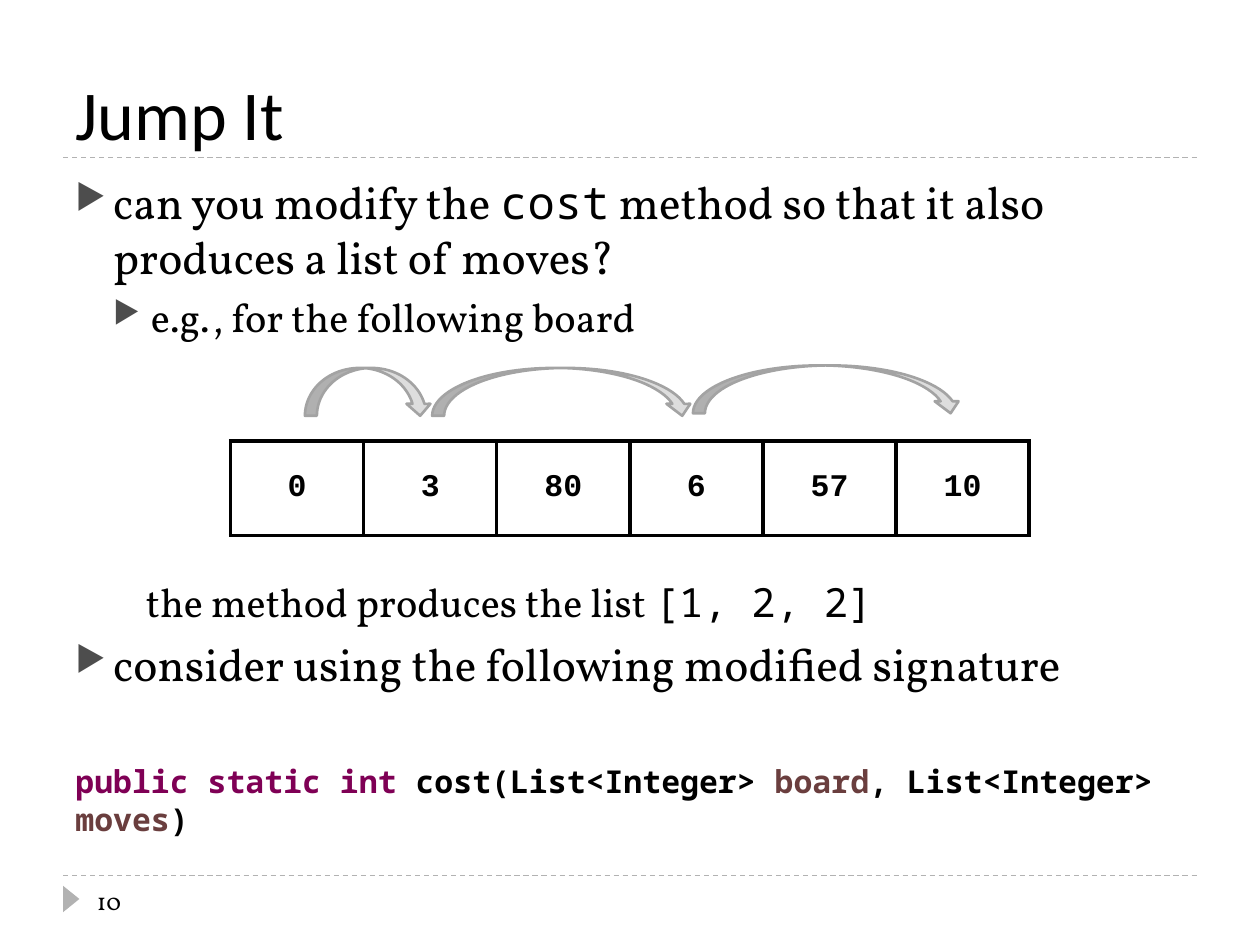
from lxml.etree import SubElement
from pptx import Presentation
from pptx.dml.color import RGBColor
from pptx.enum.dml import MSO_LINE
from pptx.enum.shapes import MSO_CONNECTOR, MSO_SHAPE
from pptx.enum.text import MSO_ANCHOR as Anchor, MSO_AUTO_SIZE, PP_ALIGN as Align
from pptx.oxml.ns import qn
from pptx.util import Inches, Pt

COLORS = {
    "text": "000000", "rule": "B2B2B2", "bullet": "4D4D4D",
    "keyword": "7F0055", "variable": "6A3E3E",
    "arrow": "DDDDDD", "arrow_edge": "A3A3A3",
}
HEADING, SERIF, MONO, CELL = "Calibri", "Vollkorn", "Noto Sans Mono", "Courier New"


def rgb(name):
    return RGBColor.from_string(COLORS[name])


class SlideBuilder:
    def __init__(self, deck):
        self.page = deck.slides.add_slide(deck.slide_layouts[5])
        self.shapes = self.page.shapes

    def frame(self, box, **formats):
        frame = box.text_frame
        defaults = {"word_wrap": True, "auto_size": MSO_AUTO_SIZE.NONE}
        for key, value in {**defaults, **formats}.items():
            setattr(frame, key, value)
        return frame

    def span(self, para, text, font, size, color="text", bold=False):
        span = para.add_run()
        span.text = text
        for key, value in {"name": font, "size": Pt(size), "bold": bold}.items():
            setattr(span.font, key, value)
        span.font.color.rgb = rgb(color)

    def title(self, text, place):
        box = self.shapes.title
        box.left, box.top, box.width, box.height = map(Inches, place)
        frame = self.frame(box, vertical_anchor=Anchor.BOTTOM, margin_bottom=Inches(0.02))
        frame.paragraphs[0].alignment = Align.LEFT
        self.span(frame.paragraphs[0], text, HEADING, 40)

    def text(self, place, paragraphs, **formats):
        frame = self.frame(self.shapes.add_textbox(*map(Inches, place)), **formats)
        for index, item in enumerate(paragraphs):
            para = frame.add_paragraph() if index else frame.paragraphs[0]
            for key, value in item.get("format", {}).items():
                setattr(para, key, Pt(value))
            self.indent(para, item.get("left", 0), item.get("bullet", False))
            for span in item["spans"]:
                self.span(para, *span)

    def indent(self, para, left, bullet):
        props = para._p.get_or_add_pPr()
        props.set("marL", str(Inches(left)))
        props.set("indent", str(Inches(-0.3 if bullet else 0)))
        if not bullet:
            SubElement(props, qn("a:buNone"))
            return
        color = SubElement(props, qn("a:buClr"))
        SubElement(color, qn("a:srgbClr"), val=COLORS["bullet"])
        SubElement(props, qn("a:buSzPct"), val="76000")
        SubElement(props, qn("a:buChar"), char="▶")

    def rule(self, y):
        line = self.shapes.add_connector(
            MSO_CONNECTOR.STRAIGHT, Inches(0.5), Inches(y), Inches(9.5), Inches(y))
        line.line.color.rgb = rgb("rule")
        line.line.width = Pt(0.75)
        line.line.dash_style = MSO_LINE.DASH
        SubElement(line._element.spPr, qn("a:effectLst"))

    def shape(self, kind, place, fill, edge=None, rotation=0):
        shape = self.shapes.add_shape(kind, *map(Inches, place))
        shape.shadow.inherit = False
        shape.rotation = rotation
        shape.fill.solid()
        shape.fill.fore_color.rgb = rgb(fill)
        if edge:
            shape.line.color.rgb = rgb(edge)
            shape.line.width = Pt(1.5)
        else:
            shape.line.fill.background()

    def board(self, place, values):
        table = self.shapes.add_table(1, len(values), *map(Inches, place)).table
        table.first_row = table.horz_banding = False
        for cell, value in zip(table.iter_cells(), values):
            cell.vertical_anchor = Anchor.MIDDLE
            para = cell.text_frame.paragraphs[0]
            para.alignment = Align.CENTER
            self.span(para, str(value), CELL, 18, bold=True)
            props = cell._tc.get_or_add_tcPr()
            for side in ("lnL", "lnR", "lnT", "lnB"):
                border = SubElement(props, qn(f"a:{side}"), w=str(Pt(2.25)))
                fill = SubElement(border, qn("a:solidFill"))
                SubElement(fill, qn("a:srgbClr"), val=COLORS["text"])
            cell.fill.background()


def main():
    deck = Presentation()
    deck.slide_width, deck.slide_height = Inches(10), Inches(7.5)
    page = SlideBuilder(deck)

    # Rules and page marker
    for y in (6.95, 1.25):
        page.rule(y)
    page.shape(MSO_SHAPE.ISOSCELES_TRIANGLE, (0.46, 7.07, 0.21, 0.13), "rule", rotation=90)

    # Title and body; wide spacing leaves room for the board
    page.title("Jump It", (0.5, 0.17, 9, 1.08))
    main_point = {"space_before": 6, "line_spacing": 31.4}
    sub_point = {"space_before": 5, "line_spacing": 27.3}
    page.text((0.5, 1.33, 9, 5.4), [
        {"left": 0.3, "bullet": True, "format": main_point, "spans": [
            ("can you modify the ", SERIF, 26),
            ("cost", MONO, 26),
            (" method so that it also produces a list of moves?", SERIF, 26)]},
        {"left": 0.6, "bullet": True, "format": sub_point, "spans": [
            ("e.g., for the following board", SERIF, 23)]},
        {"left": 0.56, "format": {**sub_point, "space_before": 135.6}, "spans": [
            ("the method produces the list ", SERIF, 23),
            ("[1, 2, 2]", MONO, 23)]},
        {"left": 0.3, "bullet": True, "format": main_point, "spans": [
            ("consider using the following modified signature", SERIF, 26)]},
        {"format": {"space_before": 40.7, "line_spacing": 21.7}, "spans": [
            (text, MONO, 18, color, True) for text, color in (
                ("public static int", "keyword"),
                (" cost(List<Integer> ", "text"),
                ("board", "variable"),
                (", List<Integer> ", "text"),
                ("moves", "variable"),
                (")", "text"))]},
    ])

    # Page number
    page.text((0.67, 6.95, 2.17, 0.4), [{"spans": [("10", SERIF, 14)]}],
              vertical_anchor=Anchor.MIDDLE)

    # Board and the jumps over it
    page.board((1.83, 3.5, 6.34, 0.75), (0, 3, 80, 6, 57, 10))
    for left, top, width in ((2.42, 2.92, 1.01), (3.43, 2.92, 2.08), (5.5, 2.9, 2.14)):
        page.shape(MSO_SHAPE.CURVED_DOWN_ARROW, (left, top, width, 0.38),
                   "arrow", "arrow_edge")

    deck.save("out.pptx")


if __name__ == "__main__":
    main()
